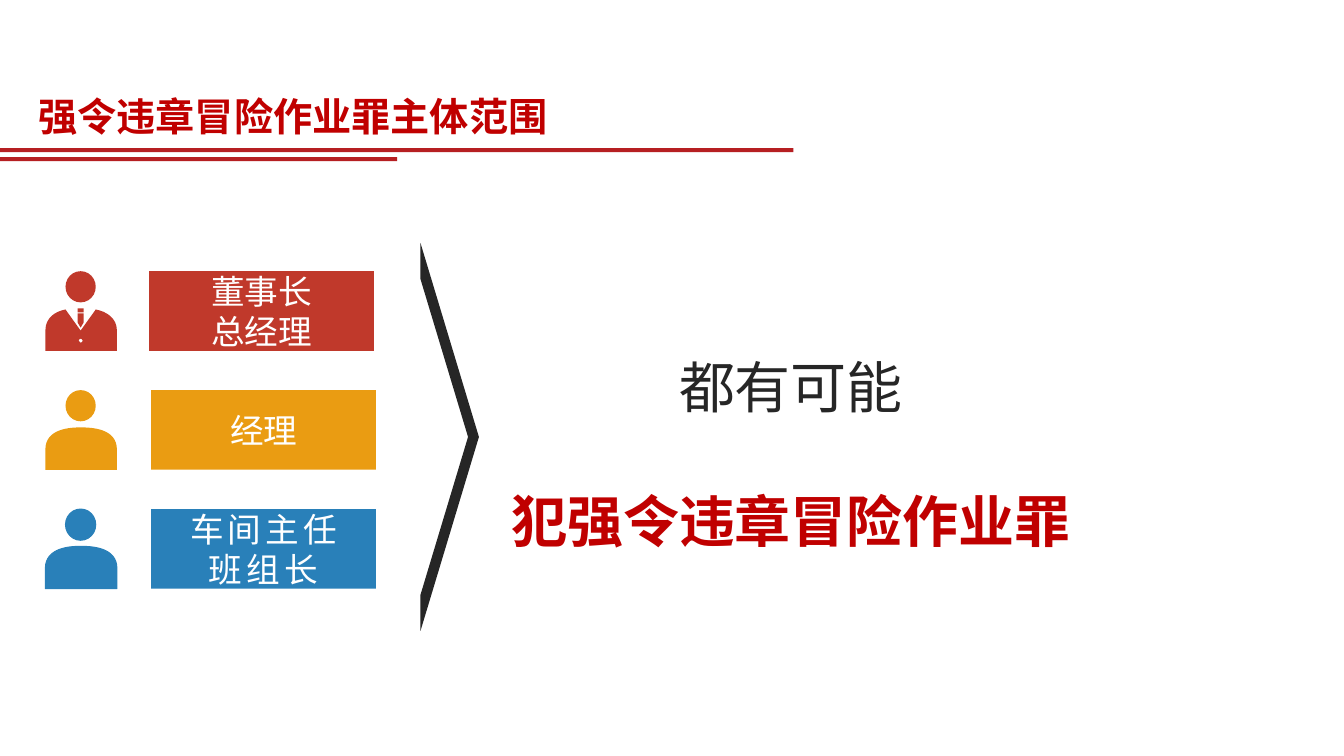
from dataclasses import dataclass

from pptx import Presentation
from pptx.dml.color import RGBColor
from pptx.enum.lang import MSO_LANGUAGE_ID as Lang
from pptx.enum.shapes import MSO_SHAPE as Shape
from pptx.enum.text import MSO_ANCHOR as Anchor, MSO_AUTO_SIZE as AutoSize, PP_ALIGN as Align
from pptx.oxml.ns import qn
from pptx.util import Emu, Pt

PX = 9144  # 100 px to the inch
CJK = "Noto Sans CJK SC"
WHITE = RGBColor(0xFF, 0xFF, 0xFF)
DARK = RGBColor(0x26, 0x26, 0x26)
CRIMSON = RGBColor(0xC0, 0x00, 0x00)
RULE_RED = RGBColor(0xB6, 0x1F, 0x22)
RED = RGBColor(0xC0, 0x39, 0x2B)
AMBER = RGBColor(0xEA, 0x9C, 0x12)
BLUE = RGBColor(0x29, 0x80, 0xB9)

Point = tuple[int, int]
# The first item is the start; then one point is a line, three are a Bezier curve.
Contour = list[tuple[Point, ...]]

PLAIN_BODY: list[Contour] = [[
    ((71, 79),), ((71, 59),),
    ((71, 38), (46, 37), (35, 37)),
    ((25, 37), (0, 38), (0, 59)),
    ((0, 79),),
]]
SUIT: list[Contour] = [
    [
        ((50, 38),), ((35, 59),), ((20, 38),),
        ((10, 40), (0, 46), (0, 59)),
        ((0, 79),), ((71, 79),), ((71, 59),),
        ((71, 46), (60, 40), (50, 38)),
    ],
    [
        ((35, 71),),
        ((34, 71), (33, 70), (33, 69)),
        ((33, 68), (34, 67), (35, 67)),
        ((36, 67), (37, 68), (37, 69)),
        ((37, 70), (36, 71), (35, 71)),
    ],
]
TIE: list[Contour] = [[((35, 56),), ((38, 51),), ((38, 42),), ((32, 42),), ((32, 51),)]]


@dataclass(frozen=True)
class Role:
    lines: tuple[str, ...]
    color: RGBColor
    bar_left: int = 150
    suit: bool = False
    outlined: bool = False
    spacing: int = 0


ROLES = [
    Role(("董事长", "总经理"), RED, bar_left=148, suit=True),
    Role(("经理",), AMBER),
    Role(("车间主任", "班组长"), BLUE, outlined=True, spacing=3),
]
ICON_LEFT, ROLES_TOP, ROLE_PITCH = 45, 269, 118


def paint(s, color: RGBColor, outlined: bool = False) -> None:
    s.shadow.inherit = False
    s.fill.solid()
    s.fill.fore_color.rgb = color
    if outlined:
        s.line.color.rgb = color
        s.line.width = Pt(0.75)
    else:
        s.line.fill.background()


def add_preset(shapes, kind: Shape, box: tuple[int, int, int, int],
               color: RGBColor, outlined: bool = False):
    s = shapes.add_shape(kind, *(Emu(v * PX) for v in box))
    paint(s, color, outlined)
    return s


def bend(s, contours: list[Contour]) -> None:
    """Join the three lines that stand for each curve into one Bezier segment."""
    lines = iter(list(s._element.iter(qn("a:lnTo"))))
    for contour in contours:
        for segment in contour[1:]:
            first, *others = [next(lines) for _ in segment]
            if others:
                first.tag = qn("a:cubicBezTo")
            for line in others:
                first.append(line[0])
                line.getparent().remove(line)


def add_outline(shapes, contours: list[Contour], top: int,
                color: RGBColor, outlined: bool = False) -> None:
    builder = None
    for contour in contours:
        start, *rest = [((ICON_LEFT + x) * PX, (top + y) * PX)
                        for segment in contour for x, y in segment]
        if builder is None:
            builder = shapes.build_freeform(*start)
        else:
            builder.move_to(*start)
        builder.add_line_segments(rest, close=True)
    s = builder.convert_to_shape()
    bend(s, contours)
    paint(s, color, outlined)


def write(p, text: str, *, size: int, color: RGBColor, font: str = CJK, bold: bool = False,
          align: Align = Align.CENTER, line_spacing: float = 1.0, spacing: int = 0) -> None:
    p.alignment = align
    p.line_spacing = line_spacing
    p.space_before = Pt(0)
    r = p.add_run()
    r.text = text
    r.font.name = font
    r.font.size = Pt(size)
    r.font.bold = bold
    r.font.color.rgb = color
    r.font.language_id = Lang.SIMPLIFIED_CHINESE
    rPr = r.font._element
    rPr.find(qn("a:latin")).addnext(rPr.makeelement(qn("a:ea"), {"typeface": CJK}))
    if spacing:
        rPr.set("spc", str(spacing * 100))


def paragraph_at(tf, i: int):
    return tf.add_paragraph() if i else tf.paragraphs[0]


def place(s, left: int, top: int, width: int, height: int):
    """Move a placeholder and return its text frame, anchored at the top."""
    s.left, s.top, s.width, s.height = (Emu(v * PX) for v in (left, top, width, height))
    tf = s.text_frame
    tf.word_wrap = True
    tf.auto_size = AutoSize.NONE
    tf.vertical_anchor = Anchor.TOP
    return tf


def add_role(slide, role: Role, top: int) -> None:
    shapes = slide.shapes.add_group_shape().shapes
    bar = add_preset(shapes, Shape.RECTANGLE, (role.bar_left, top, 223, 79), role.color)
    tf = bar.text_frame
    tf.word_wrap = True
    tf.vertical_anchor = Anchor.MIDDLE
    for i, line in enumerate(role.lines):
        write(paragraph_at(tf, i), line, size=24, color=WHITE, spacing=role.spacing)
    add_preset(shapes, Shape.OVAL, (ICON_LEFT + 20, top, 30, 31), role.color, role.outlined)
    if role.suit:
        add_preset(shapes, Shape.RECTANGLE, (ICON_LEFT + 32, top + 37, 6, 4), role.color)
        add_outline(shapes, TIE, top, role.color)
    add_outline(shapes, SUIT if role.suit else PLAIN_BODY, top, role.color, role.outlined)


def main() -> None:
    prs = Presentation()
    prs.slide_width, prs.slide_height = Emu(1333 * PX), Emu(750 * PX)
    slide = prs.slides.add_slide(prs.slide_layouts[1])
    title, body = slide.placeholders

    for top, width in ((147, 787), (156, 394)):
        add_preset(slide.shapes, Shape.RECTANGLE, (0, top, width, 4), RULE_RED)

    tf = place(title, 28, 87, 1197, 57)
    write(tf.paragraphs[0], "强令违章冒险作业罪主体范围", size=28, color=CRIMSON,
          font="Arial", bold=True, align=Align.LEFT)

    for i, role in enumerate(ROLES):
        add_role(slide, role, ROLES_TOP + i * ROLE_PITCH)

    arrow = add_preset(slide.shapes, Shape.NOTCHED_RIGHT_ARROW, (417, 241, 58, 385), DARK)
    arrow.adjustments[0], arrow.adjustments[1] = 0.814, 1

    tf = place(body, 493, 278, 583, 260)
    conclusion = (("都有可能", DARK, False), ("犯强令违章冒险作业罪", CRIMSON, True))
    for i, (text, color, bold) in enumerate(conclusion):
        p = paragraph_at(tf, i)
        pPr = p._p.get_or_add_pPr()
        pPr.set("marL", "0")
        pPr.set("indent", "0")
        pPr.append(pPr.makeelement(qn("a:buNone"), {}))
        write(p, text, size=40, color=color, bold=bold, line_spacing=2.0)

    prs.save("out.pptx")


if __name__ == "__main__":
    main()
